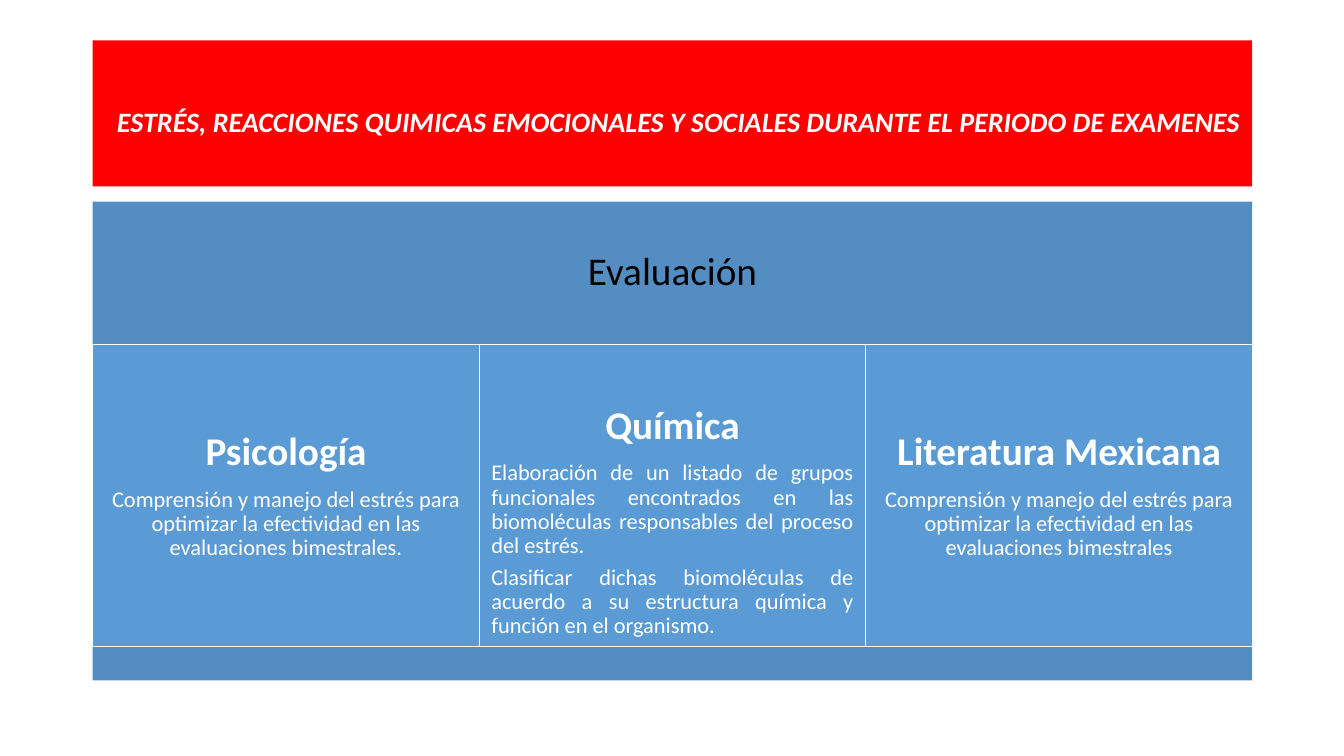
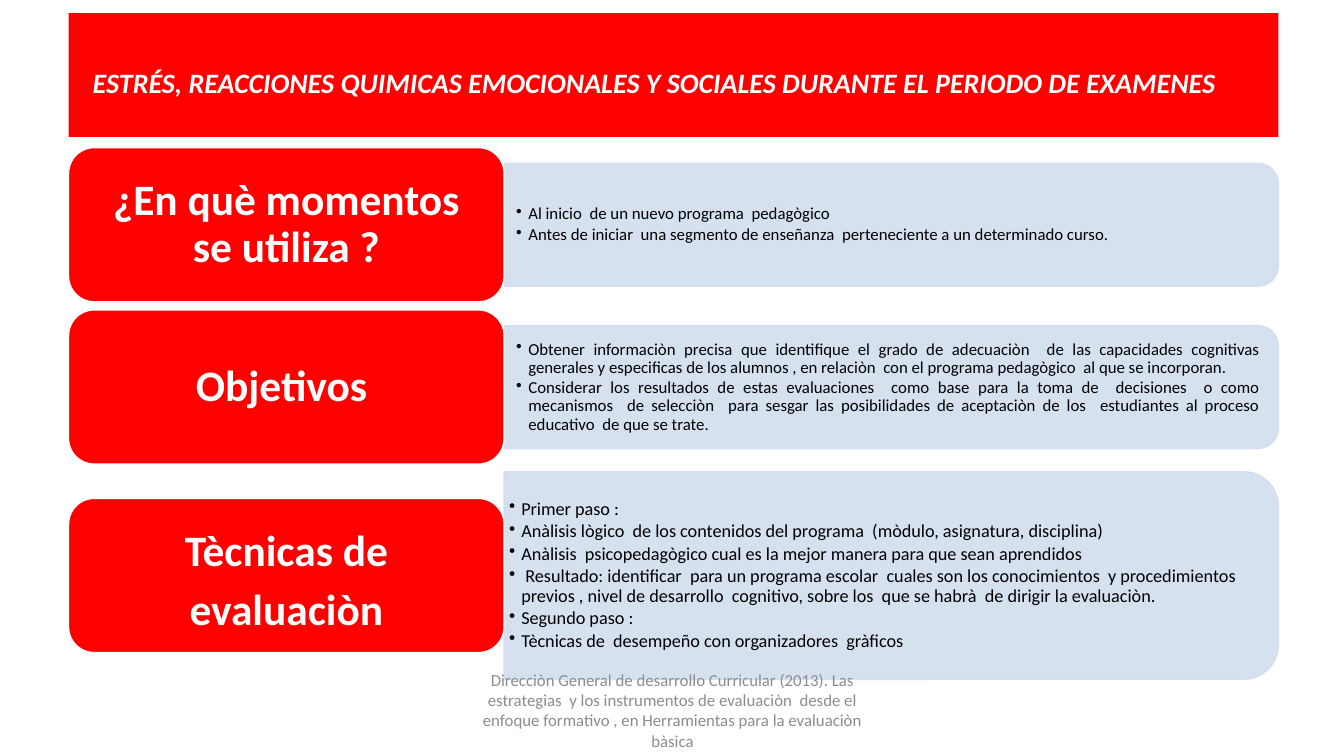
from lxml import etree
from pptx import Presentation
from pptx.dml.color import RGBColor
from pptx.enum.shapes import MSO_SHAPE
from pptx.enum.text import MSO_ANCHOR, PP_ALIGN
from pptx.oxml.ns import qn
from pptx.util import Inches, Pt

RECT = MSO_SHAPE.RECTANGLE
ROUNDED = MSO_SHAPE.ROUNDED_RECTANGLE
TWO_ROUNDED = MSO_SHAPE.ROUND_2_SAME_RECTANGLE
LEFT, CENTER, JUSTIFY = PP_ALIGN.LEFT, PP_ALIGN.CENTER, PP_ALIGN.JUSTIFY
TOP, MIDDLE = MSO_ANCHOR.TOP, MSO_ANCHOR.MIDDLE

FONT = "Calibri"
RED, BLUE, DARK_BLUE, PALE_BLUE = "FF0000", "5B9BD5", "538DC1", "D2DEEF"
WHITE, BLACK, GREY = "FFFFFF", "000000", "8C8C8C"

TITLE = ("ESTRÉS, REACCIONES QUIMICAS EMOCIONALES Y SOCIALES "
         "DURANTE EL PERIODO DE EXAMENES")

# Heading, paragraphs, alignment, anchor, top inset
SUBJECTS = [
    ("Psicología",
     ["Comprensión y manejo del estrés para optimizar la efectividad en las "
      "evaluaciones bimestrales."], CENTER, MIDDLE, 0.12),
    ("Química",
     ["Elaboración de un listado de grupos funcionales encontrados en las "
      "biomoléculas responsables del proceso del estrés.",
      "Clasificar dichas biomoléculas de acuerdo a su estructura química y "
      "función en el organismo."], JUSTIFY, TOP, 0.6),
    ("Literatura Mexicana",
     ["Comprensión y manejo del estrés para optimizar la efectividad en las "
      "evaluaciones bimestrales"], CENTER, MIDDLE, 0.12),
]

# Label, label line spacing, bullets, alignment, text size, side inset,
# middle of the row, panel height
TOPICS = [
    ("¿En què momentos se utiliza ?", 0.9,
     ["Al inicio  de un nuevo programa  pedagògico",
      "Antes de iniciar  una segmento de enseñanza  perteneciente a un "
      "determinado curso."], LEFT, 12, 0.12, 2.23, 1.22),
    ("Objetivos ", 0.9,
     ["Obtener informaciòn precisa que identifique el grado de adecuaciòn  de "
      "las capacidades cognitivas generales y especificas de los alumnos , en "
      "relaciòn  con el programa pedagògico  al que se incorporan.",
      "Considerar los resultados de estas evaluaciones  como base para la toma "
      "de  decisiones  o como mecanismos  de selecciòn  para sesgar las "
      "posibilidades de aceptaciòn de los  estudiantes al proceso educativo  "
      "de que se trate."], JUSTIFY, 12, 0.12, 3.84, 1.22),
    ("Tècnicas de evaluaciòn", 1.13,
     ["Primer paso :",
      "Anàlisis lògico  de los contenidos del programa  (mòdulo, asignatura, "
      "disciplina)",
      "Anàlisis  psicopedagògico cual es la mejor manera para que sean "
      "aprendidos",
      " Resultado: identificar  para un programa escolar  cuales son los "
      "conocimientos  y procedimientos previos , nivel de desarrollo  "
      "cognitivo, sobre los  que se habrà  de dirigir la evaluaciòn.",
      "Segundo paso :",
      "Tècnicas de  desempeño con organizadores  gràficos"],
     LEFT, 13, 0.05, 5.71, 2.06),
]

FOOTER = ("Direcciòn General de desarrollo Curricular (2013). Las estrategias  y "
          "los instrumentos de evaluaciòn  desde el enfoque formativo , en "
          "Herramientas para la evaluaciòn bàsica")


def color(hex_string):
    return RGBColor.from_string(hex_string)


def add_block(slide, kind, left, top, width, height, fill, line=None):
    box = slide.shapes.add_shape(kind, Inches(left), Inches(top),
                                 Inches(width), Inches(height))
    box.shadow.inherit = False
    box.fill.solid()
    box.fill.fore_color.rgb = color(fill)
    if line:
        box.line.color.rgb = color(line)
        box.line.width = Pt(1)
    else:
        box.line.fill.background()
    return box


def add_text_box(slide, left, top, width, height):
    return slide.shapes.add_textbox(Inches(left), Inches(top),
                                    Inches(width), Inches(height))


def set_frame(box, insets, anchor=MIDDLE):
    """Insets are left, top, right, bottom in inches."""
    frame = box.text_frame
    frame.word_wrap = True
    frame.vertical_anchor = anchor
    (frame.margin_left, frame.margin_top,
     frame.margin_right, frame.margin_bottom) = map(Inches, insets)


def write(box, text, size, ink, align=CENTER, bold=False, italic=False,
          spacing=0.9, after=0):
    """Fill the first paragraph if it is free, else add one."""
    frame = box.text_frame
    para = frame.add_paragraph() if frame.text else frame.paragraphs[0]
    para.text = text
    para.alignment = align
    para.line_spacing = spacing
    para.space_after = Pt(after)
    font = para.font
    font.name, font.size, font.bold, font.italic = FONT, Pt(size), bold, italic
    font.color.rgb = color(ink)
    return para


def add_bullet(para, indent):
    properties = para._p.get_or_add_pPr()
    properties.set("marL", str(Inches(indent)))
    properties.set("indent", str(-Inches(indent)))
    etree.SubElement(properties, qn("a:buChar")).set("char", "•")


def set_alpha(box, percent):
    for shade in box._element.spPr.iter(qn("a:srgbClr")):
        etree.SubElement(shade, qn("a:alpha")).set("val", str(percent * 1000))


def add_title(slide, left, top, width, height):
    band = add_block(slide, RECT, left, top, width, height, RED)
    set_frame(band, (0.24, 0.24, 0, 0.05))
    write(band, TITLE, 20, WHITE, LEFT, bold=True, italic=True)


def build_evaluation(slide):
    left, width = 0.92, 11.5
    header_top, columns_top, base_top = 2, 3.42, 6.42
    column_width = width / len(SUBJECTS)

    header = add_block(slide, RECT, left, header_top, width,
                       columns_top - header_top, DARK_BLUE)
    set_frame(header, (0.12,) * 4)
    write(header, "Evaluación", 28, BLACK)

    for index, (heading, texts, align, anchor, inset) in enumerate(SUBJECTS):
        column = add_block(slide, RECT, left + index * column_width, columns_top,
                           column_width, base_top - columns_top, BLUE, WHITE)
        set_frame(column, (0.12, inset, 0.12, 0.12), anchor)
        write(column, heading, 28, WHITE, bold=True, after=10)
        for text in texts:
            write(column, text, 16, WHITE, align, after=5.5)

    add_block(slide, RECT, left, base_top, width, 0.33, DARK_BLUE)
    add_title(slide, left, 0.4, width, 1.45)


def build_topics(slide):
    left, width = 0.68, 12
    label_width, label_height = 4.32, 1.53
    panel_left, panel_width = left + label_width, width - label_width

    for (name, spacing, bullets, align, size, inset,
         middle, panel_height) in TOPICS:
        # The panel is turned a quarter, so its sides swap around its centre
        panel = add_block(slide, TWO_ROUNDED,
                          panel_left + (panel_width - panel_height) / 2,
                          middle - panel_width / 2,
                          panel_height, panel_width, PALE_BLUE, PALE_BLUE)
        panel.rotation = 90
        set_alpha(panel, 90)

        details = add_text_box(slide, panel_left, middle - panel_height / 2,
                               panel_width - 0.06, panel_height)
        set_frame(details, (inset, 0.06, inset, 0.06))
        for bullet in bullets:
            para = write(details, bullet, size, BLACK, align, after=0.15 * size)
            add_bullet(para, 0.12)

        label = add_block(slide, ROUNDED, left, middle - label_height / 2,
                          label_width, label_height, RED, WHITE)
        set_frame(label, (0.2, 0.06, 0.2, 0.06))
        write(label, name, 31, WHITE, bold=True, spacing=spacing)

    footer = add_text_box(slide, 4.56, 6.74, 4.22, 0.61)
    set_frame(footer, (0.1, 0.05, 0.1, 0.05))
    write(footer, FOOTER, 12, GREY, spacing=1.0)
    add_title(slide, left, 0.13, width, 1.23)


def main():
    deck = Presentation()
    deck.slide_width, deck.slide_height = Inches(13.33), Inches(7.5)
    blank = deck.slide_layouts[6]
    for build in (build_evaluation, build_topics):
        build(deck.slides.add_slide(blank))
    deck.save("out.pptx")


if __name__ == "__main__":
    main()
